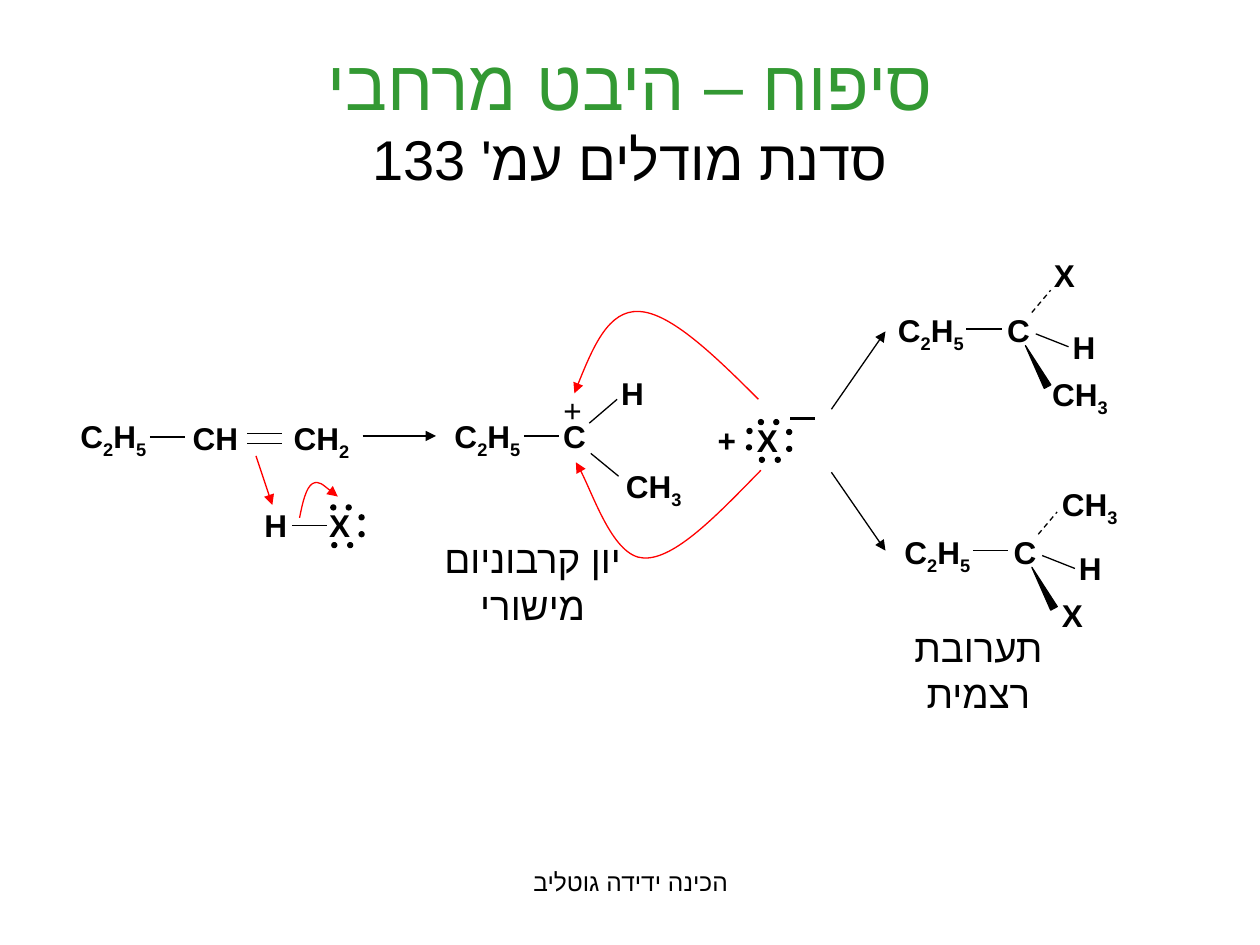
from dataclasses import dataclass
from itertools import groupby

from lxml.etree import SubElement
from pptx import Presentation
from pptx.dml.color import RGBColor
from pptx.enum.dml import MSO_LINE_DASH_STYLE as Dash
from pptx.enum.shapes import MSO_CONNECTOR as Connector, MSO_SHAPE as Preset
from pptx.enum.text import MSO_ANCHOR as Anchor, MSO_AUTO_SIZE as AutoSize, PP_ALIGN as Align
from pptx.oxml.ns import qn
from pptx.util import Cm, Pt


@dataclass(frozen=True)
class Theme:
    """Colours, type sizes and line widths of the slide."""
    font: str = "Arial"
    ink: RGBColor = RGBColor(0, 0, 0)
    heading: RGBColor = RGBColor(0x33, 0x99, 0x33)
    electrons: RGBColor = RGBColor(0xFF, 0, 0)
    title: Pt = Pt(40)
    subtitle: Pt = Pt(32)
    caption: Pt = Pt(22)
    formula: Pt = Pt(18)
    footer: Pt = Pt(14)
    thin: Pt = Pt(0.75)
    thick: Pt = Pt(1.5)


THEME = Theme()
LABEL_HEIGHT = 1.02
LONE_PAIRS = [(0.61, 0.1), (0.3, 0.1), (0.87, 0.3), (0.87, 0.64),
              (0.64, 0.86), (0.32, 0.86), (0.07, 0.28), (0.06, 0.61)]


def assign(target, **values):
    """Set every given attribute on the target."""
    for name, value in values.items():
        setattr(target, name, value)


def add_run(paragraph, text, size, color=THEME.ink, bold=False, subscript=False):
    """Append a run, with the same font for Latin and Hebrew."""
    run = paragraph.add_run()
    run.text = text
    run.font.color.rgb = color
    assign(run.font, size=size, bold=bold, name=THEME.font)
    properties = run.font._element
    SubElement(properties, qn("a:cs"), typeface=THEME.font)
    if subscript:
        properties.set("baseline", "-25000")


def set_rtl(paragraph, alignment):
    """Make a paragraph run from right to left."""
    paragraph.alignment = alignment
    paragraph._p.get_or_add_pPr().set("rtl", "1")


def stroke(shape, color, width, arrow=False, dash=None):
    """Format a line, with an optional arrowhead at its end."""
    shape.line.color.rgb = color
    assign(shape.line, width=width, dash_style=dash)
    if arrow:
        SubElement(shape.element.spPr.find(qn("a:ln")), qn("a:tailEnd"), type="triangle")


@dataclass
class Region:
    """A part of the slide whose contents are placed from its top left corner."""
    shapes: object
    left: float
    top: float

    def at(self, x, y):
        """Give the slide position of a point in the region."""
        return Cm(self.left + x), Cm(self.top + y)

    def text_box(self, x, y, width, height, alignment, fit=AutoSize.SHAPE_TO_FIT_TEXT):
        """Add a wrapping box and return its paragraph."""
        frame = self.shapes.add_textbox(*self.at(x, y), Cm(width), Cm(height)).text_frame
        assign(frame, word_wrap=True, auto_size=fit)
        set_rtl(frame.paragraphs[0], alignment)
        return frame.paragraphs[0]

    def formula(self, text, x, y, width, bold=True):
        """Write a formula with its digits as subscripts."""
        paragraph = self.text_box(x, y, width, LABEL_HEIGHT, Align.RIGHT)
        for is_digit, letters in groupby(text, str.isdigit):
            add_run(paragraph, "".join(letters), THEME.formula, bold=bold, subscript=is_digit)

    def caption(self, text, x, y, width):
        """Write a centred two-line caption."""
        add_run(self.text_box(x, y, width, 2.11, Align.CENTER), text, THEME.caption)

    def bond(self, start, end, color=THEME.ink, width=THEME.thin, **style):
        """Draw a straight bond or arrow."""
        line = self.shapes.add_connector(Connector.STRAIGHT, *self.at(*start), *self.at(*end))
        stroke(line, color, width, **style)
        SubElement(line.element.spPr, qn("a:effectLst"))

    def solid(self, preset, x, y, width, height, rotation=0):
        """Draw a filled preset shape."""
        shape = self.shapes.add_shape(preset, *self.at(x, y), Cm(width), Cm(height))
        assign(shape, rotation=rotation)
        shape.shadow.inherit = False
        shape.fill.solid()
        shape.fill.fore_color.rgb = THEME.ink
        stroke(shape, THEME.ink, THEME.thin)

    def halogen(self, x, y, electrons):
        """Write X with a number of electron dots around it."""
        self.formula("X", x, y, 0.94)
        for dx, dy in LONE_PAIRS[:electrons]:
            self.solid(Preset.OVAL, x + dx, y + dy, 0.1, 0.1)

    def electron_flow(self, start, *controls):
        """Draw a curved arrow through cubic Bézier control points."""
        builder = self.shapes.build_freeform(*self.at(*start))
        builder.add_line_segments([self.at(*point) for point in controls], close=False)
        arrow = builder.convert_to_shape()
        arrow.shadow.inherit = False
        arrow.fill.background()
        stroke(arrow, THEME.electrons, THEME.thin, arrow=True)
        segments = list(arrow.element.iter(qn("a:lnTo")))
        for first in range(0, len(segments), 3):
            outline = segments[first].getparent()
            curve = SubElement(outline, qn("a:cubicBezTo"))
            for segment in segments[first:first + 3]:
                curve.append(segment[0])
                outline.remove(segment)


def fill_title(title):
    """Place the title and write its two lines."""
    assign(title, left=Cm(1.27), top=Cm(0.76), width=Cm(22.86), height=Cm(3.18))
    assign(title.text_frame, vertical_anchor=Anchor.MIDDLE, auto_size=AutoSize.NONE)
    paragraph = title.text_frame.paragraphs[0]
    set_rtl(paragraph, Align.CENTER)
    add_run(paragraph, "סיפוח – היבט מרחבי", THEME.title, THEME.heading)
    paragraph.add_line_break()
    SubElement(paragraph._p.find(qn("a:br")), qn("a:rPr"), sz="4000")
    add_run(paragraph, "סדנת מודלים עמ' 133", THEME.subtitle)


def draw_reactants(region):
    """Draw the alkene, the H–X molecule and the reaction arrow."""
    region.formula("C2H5", 0, 0, 2.21)
    region.bond((2.03, 0.53), (2.74, 0.53))
    region.formula("CH", 2.59, 0.05, 1.47)
    for y in (0.46, 0.66):
        region.bond((3.99, y), (4.7, y))
    region.formula("CH2", 4.47, 0.05, 1.83)
    region.bond((4.17, 0.91), (4.5, 1.9), THEME.electrons, arrow=True)
    region.formula("H", 4.11, 1.8, 0.94)
    region.bond((4.9, 2.31), (5.61, 2.31))
    region.halogen(5.38, 1.8, electrons=6)
    region.electron_flow((5.05, 2.16), (5.11, 1.85), (5.18, 1.55), (5.31, 1.47),
                         (5.44, 1.4), (5.61, 1.57), (5.82, 1.73))
    region.bond((6.32, 0.51), (7.8, 0.51), arrow=True)


def draw_carbocation(region):
    """Draw the planar carbocation and its caption."""
    region.formula("C2H5", 0, 0.86, 2.21)
    region.bond((2.03, 1.37), (2.74, 1.37))
    region.formula("C", 2.46, 0.86, 1.07)
    region.formula("+", 2.69, 0.33, 0.76, bold=False)
    region.bond((3.35, 1.11), (3.91, 0.63))
    region.formula("H", 3.56, 0, 1.14)
    region.bond((3.38, 1.72), (3.94, 2.18))
    region.formula("CH3", 3.25, 1.88, 2.21)
    region.caption("יון קרבוניום מישורי", 0.05, 3.25, 4.32)


def draw_halide(region):
    """Draw the plus sign and the halide ion."""
    region.formula("+", 0, 0, 0.84)
    region.halogen(0.74, 0, electrons=8)
    region.bond((1.68, 0.08), (2.18, 0.08), width=THEME.thick)


def draw_attack(region):
    """Draw the attacks from above and below."""
    region.electron_flow((3.71, 1.8), (2.82, 0.91), (1.93, 0.05), (1.3, 0.03),
                         (0.69, 0), (0.33, 0.84), (0, 1.68))
    region.electron_flow((3.76, 3.23), (2.9, 4.11), (2.03, 5.03), (1.4, 5),
                         (0.79, 4.98), (0.3, 3.48), (0.03, 3.07))


def draw_branches(region):
    """Draw the arrows to the two products."""
    region.bond((0, 1.57), (1.09, 0), arrow=True)
    region.bond((0, 2.84), (1.09, 4.42), arrow=True)


def draw_product(region, back, front):
    """Draw one enantiomer with its back and front substituents."""
    region.formula("C2H5", 0, 1.12, 1.98)
    region.bond((1.78, 1.6), (2.49, 1.6))
    region.formula("C", 2.34, 1.12, 0.97)
    region.bond((3.1, 1.27), (3.48, 0.82), dash=Dash.DASH)
    region.bond((3.18, 1.7), (3.84, 1.96))
    region.formula("H", 3.61, 1.45, 1.02)
    region.solid(Preset.ISOSCELES_TRIANGLE, 3.12, 1.88, 0.15, 0.94, rotation=331.7)
    region.formula(*back)
    region.formula(*front)


def main():
    """Build the slide and save it."""
    deck = Presentation()
    assign(deck, slide_width=Cm(25.4), slide_height=Cm(19.05))
    shapes = deck.slides.add_slide(deck.slide_layouts[5]).shapes
    fill_title(shapes.title)
    draw_reactants(Region(shapes, 0.99, 8.28))
    draw_branches(Region(shapes, 16.76, 6.68))
    draw_product(Region(shapes, 17.7, 5.03), ("X", 3.15, 0, 1.07), ("CH3", 2.67, 2.41, 2.21))
    draw_product(Region(shapes, 17.83, 9.5), ("CH3", 2.74, 0.15, 2.21), ("X", 3.18, 2.39, 1.07))
    draw_halide(Region(shapes, 14.25, 8.36))
    draw_carbocation(Region(shapes, 8.53, 7.42))
    draw_attack(Region(shapes, 11.58, 6.25))
    Region(shapes, 17.91, 12.45).caption("תערובת רצמית", 0, 0, 3.63)
    credit = Region(shapes, 8.69, 17.35).text_box(0, 0, 8.05, 1.32, Align.CENTER, AutoSize.NONE)
    add_run(credit, "הכינה ידידה גוטליב", THEME.footer)
    deck.save("out.pptx")


if __name__ == "__main__":
    main()
